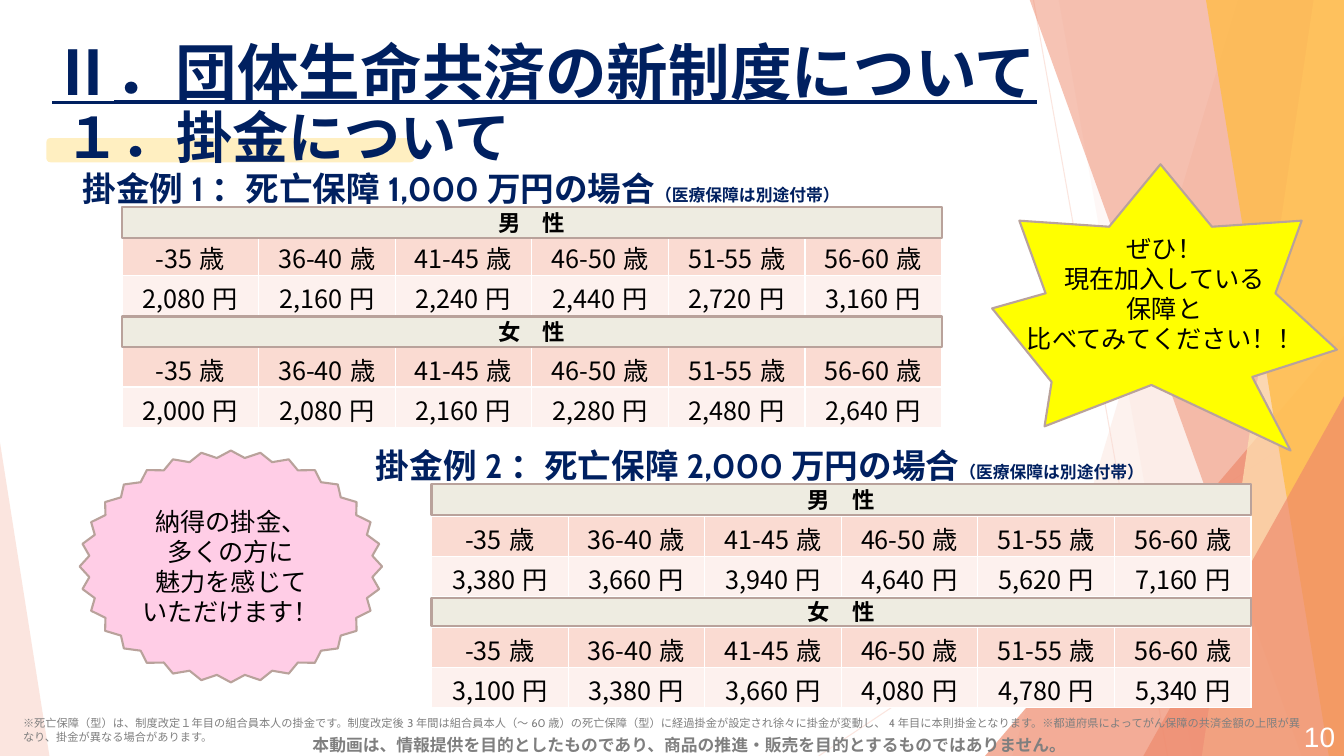
"""Build the slide on the premiums of the new group life mutual aid scheme."""
from lxml.etree import SubElement
from pptx import Presentation
from pptx.dml.color import RGBColor
from pptx.enum.shapes import MSO_CONNECTOR as Connector, MSO_SHAPE as Shape
from pptx.enum.text import MSO_ANCHOR as Anchor, MSO_AUTO_SIZE as AutoSize, PP_ALIGN as Align
from pptx.oxml.ns import qn
from pptx.util import Inches, Pt

NAVY, GRAY, BLACK, WHITE = "002060", "7F7F7F", "000000", "FFFFFF"
PINK, CORAL, BORDER = "FADBD2", "EE886A", "B9A29B"
LATIN, SANS, JAPANESE = "Cabin", "Arial", "Noto Sans CJK JP"

RAYS = [((10.25, 0), (11.58, 7.5)), ((13.33, 4.03), (8.12, 7.5))]
BANDS = [
    (12.28, 10.04, PINK, 36),
    (10.5, 11.83, PINK, 20),
    ("triangle", (9.77, 3.33, 3.56, 4.17), 1, CORAL, 66),
    (10.21, 12.91, CORAL, 50),
    (13.03, 11.92, "FFE4B5", 70),
    (11.96, 13.18, "FFBC48", 80),
    ("triangle", (11.34, 3.93, 1.99, 3.57), 1, CORAL, 66),
    ("triangle", (0, 4.39, 0.49, 3.11), 0, PINK, 70),
]

AGES = ["-35歳", "36-40歳", "41-45歳", "46-50歳", "51-55歳", "56-60歳"]
TABLE_WIDTH, ROW_HEIGHT = 8.13, 0.4
NOTE = "（医療保障は別途付帯）"
EXAMPLES = [
    ("掛金例1：死亡保障1,000万円の場合", (0.72, 1.62, 12.37, 0.5), 1.21, [
        ("男　性", 2.05, 0.31, 2.33, [2080, 2160, 2240, 2440, 2720, 3160]),
        ("女　性", 3.14, 0.3, 3.44, [2000, 2080, 2160, 2280, 2480, 2640])]),
    ("掛金例2：死亡保障2,000万円の場合", (3.63, 4.36, 8.79, 0.98), 4.28, [
        ("男　性", 4.8, 0.31, 5.12, [3380, 3660, 3940, 4640, 5620, 7160]),
        ("女　性", 5.93, 0.28, 6.22, [3100, 3380, 3660, 4080, 4780, 5340])]),
]

STAR_POINTS = [
    (9.84, 3.06), (10.37, 2.91), (10.11, 2.19), (11, 2.25), (11.51, 1.63),
    (12.02, 2.25), (12.91, 2.19), (12.65, 2.91), (13.26, 3.47), (12.42, 3.74),
    (12.8, 4.47), (11.42, 3.82), (10.36, 4.23), (10.43, 3.79)]
STAR_LINES = ["ぜひ！", "現在加入している", "保障と", "比べてみてください！！"]
SEAL_LINES = ["納得の掛金、", "多くの方に", "魅力を感じて", "いただけます！"]
DISCLAIMER = "本動画は、情報提供を目的としたものであり、商品の推進・販売を目的とするものではありません。"
FOOTNOTE = ("※死亡保障（型）は、制度改定１年目の組合員本人の掛金です。"
            "制度改定後3年間は組合員本人（～60歳）の死亡保障（型）に経過掛金が設定され"
            "徐々に掛金が変動し、4年目に本則掛金となります。"
            "※都道府県によってがん保障の共済金額の上限が異なり、掛金が異なる場合があります。")


def rgb(color):
    return RGBColor.from_string(color)


def inches(values):
    return [Inches(value) for value in values]


def set_typeface(font, name):
    font.name = name
    SubElement(font._element, qn("a:ea")).set("typeface", name)


def style(para, name, size, color, bold=False, align=Align.LEFT):
    para.alignment = align
    font = para.font
    font.size, font.bold = Pt(size), bold
    font.color.rgb = rgb(color)
    set_typeface(font, name)


def set_alpha(fill, percent):
    color = next(fill.iter(qn("a:srgbClr")))
    SubElement(color, qn("a:alpha")).set("val", str(percent * 1000))


def paint(shape, fill, line=None, alpha=None):
    shape.shadow.inherit = False
    shape.fill.solid()
    shape.fill.fore_color.rgb = rgb(fill)
    if alpha:
        set_alpha(shape.element.spPr, alpha)
    if line:
        shape.line.color.rgb = rgb(line)
        shape.line.width = Pt(1.5)
    else:
        shape.line.fill.background()


def add_outline(page, points):
    start, *rest = [inches(point) for point in points]
    builder = page.shapes.build_freeform(*start)
    builder.add_line_segments(rest, close=True)
    return builder.convert_to_shape()


def add_text(page, place, text, *look, anchor=Anchor.TOP, **options):
    box = page.shapes.add_textbox(*inches(place))
    box.text_frame.word_wrap = True
    box.text_frame.vertical_anchor = anchor
    para = box.text_frame.paragraphs[0]
    para.add_run().text = text
    style(para, *look, **options)
    return para


def add_background(page):
    for start, end in RAYS:
        ray = page.shapes.add_connector(Connector.STRAIGHT, *inches(start + end))
        ray.line.color.rgb = rgb(PINK)
        ray.line.width = Pt(0.75)
        set_alpha(ray.element.spPr, 70)
        SubElement(ray.element.spPr, qn("a:effectLst"))
    for band in BANDS:
        if band[0] == "triangle":
            _, place, apex, color, alpha = band
            shape = page.shapes.add_shape(Shape.ISOSCELES_TRIANGLE, *inches(place))
            shape.adjustments[0] = apex
        else:
            top, bottom, color, alpha = band
            shape = add_outline(
                page, [(top, -0.01), (13.33, -0.01), (13.33, 7.5), (bottom, 7.5)])
        paint(shape, color, alpha=alpha)


def add_title(page):
    title = page.shapes.title
    title.left, title.top, title.width, title.height = inches((0.42, 0.29, 14.18, 0.8))
    frame = title.text_frame
    frame.auto_size, frame.vertical_anchor = AutoSize.NONE, Anchor.TOP
    para = frame.paragraphs[0]
    style(para, LATIN, 44, NAVY, bold=True)
    para.font.underline = True
    numeral, heading = para.add_run(), para.add_run()
    numeral.text, heading.text = "Ⅱ", "．団体生命共済の新制度について"
    set_typeface(numeral.font, SANS)
    title.element.getparent().append(title.element)


def add_premiums(page, left, top, premiums):
    rows = [AGES, [f"{premium:,}円" for premium in premiums]]
    place = inches((left, top, TABLE_WIDTH, ROW_HEIGHT * len(rows)))
    table = page.shapes.add_table(len(rows), len(AGES), *place).table
    for row, (texts, fill) in enumerate(zip(rows, (PINK, "FDF1EE"))):
        for column, text in enumerate(texts):
            cell = table.cell(row, column)
            cell.fill.solid()
            cell.fill.fore_color.rgb = rgb(fill)
            cell.margin_top, cell.margin_bottom = Inches(0.04), 0
            cell.text = text
            style(cell.text_frame.paragraphs[0], JAPANESE, 18, BLACK, align=Align.CENTER)


def add_example(page, heading, place, left, groups):
    para = add_text(page, place, heading, LATIN, 24, NAVY, bold=True)
    note = para.add_run()
    note.text = NOTE
    note.font.size = Pt(12)
    for label, top, height, table_top, premiums in groups:
        add_premiums(page, left, table_top, premiums)
        bar = page.shapes.add_shape(
            Shape.RECTANGLE, *inches((left, top, TABLE_WIDTH, height)))
        paint(bar, "EEECE1", BORDER)
        bar.text_frame.text = label
        bar.text_frame.vertical_anchor = Anchor.MIDDLE
        style(bar.text_frame.paragraphs[0], LATIN, 16, BLACK, bold=True, align=Align.CENTER)


def add_callout(shape, fill, lines, bottom=0.05):
    paint(shape, fill, BORDER)
    frame = shape.text_frame
    frame.word_wrap = True
    frame.vertical_anchor, frame.margin_bottom = Anchor.MIDDLE, Inches(bottom)
    frame.text = "\n".join(lines)
    for para in frame.paragraphs:
        style(para, JAPANESE, 18, BLACK, align=Align.CENTER)
        para.line_spacing = Pt(21.4)


def main():
    deck = Presentation()
    deck.slide_width, deck.slide_height = Inches(13.33), Inches(7.5)
    page = deck.slides.add_slide(deck.slide_layouts[5])
    add_background(page)
    add_title(page)
    for example in EXAMPLES:
        add_example(page, *example)
    add_text(page, (0.42, 7.24, 12.84, 0.3), DISCLAIMER, SANS, 12, GRAY,
             bold=True, align=Align.CENTER)
    add_text(page, (0.13, 7.06, 12.89, 0.37), FOOTNOTE, LATIN, 8, GRAY)
    add_callout(add_outline(page, STAR_POINTS), "FFFF00", STAR_LINES, bottom=0.33)
    seal = page.shapes.add_shape(Shape.STAR_32_POINT, *inches((0.79, 4.47, 3, 2.3)))
    seal.adjustments[0] = 0.47
    add_callout(seal, "FFCDE6", SEAL_LINES)
    add_text(page, (12.59, 7.1, 0.75, 0.4), "10", SANS, 20, WHITE,
             anchor=Anchor.MIDDLE, align=Align.RIGHT)
    marker = page.shapes.add_shape(Shape.ROUNDED_RECTANGLE, *inches((0.46, 1.37, 3.65, 0.24)))
    paint(marker, "FFEFC1")
    add_text(page, (0.54, 0.97, 8.14, 0.77), "１．掛金について", LATIN, 40, NAVY, bold=True)
    deck.save("out.pptx")


if __name__ == "__main__":
    main()
